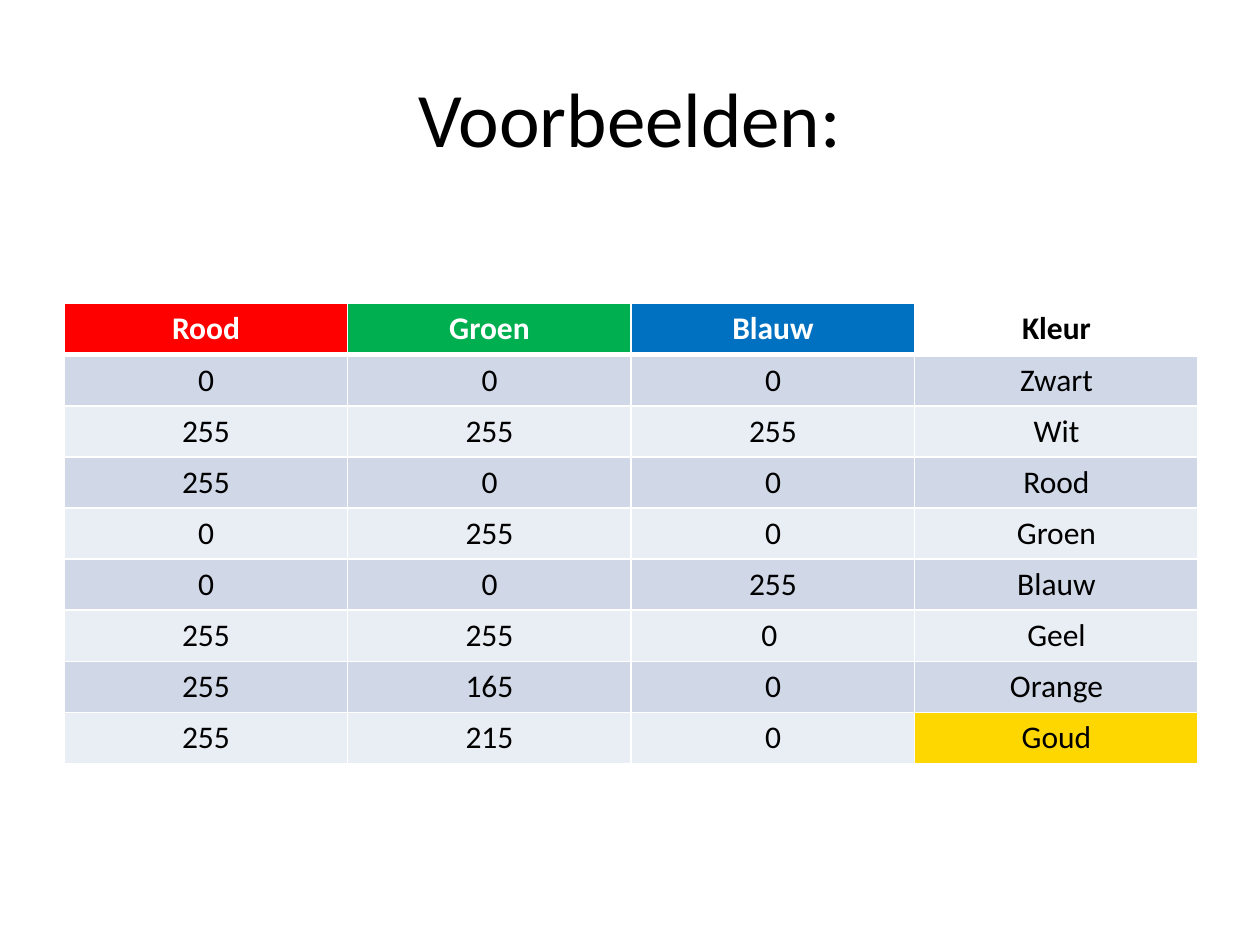
"""Build a slide with a table of RGB values and the colours they make."""
from lxml.etree import SubElement
from pptx import Presentation
from pptx.dml.color import RGBColor
from pptx.enum.text import MSO_ANCHOR, PP_ALIGN
from pptx.oxml.ns import qn
from pptx.util import Inches, Pt


def style(paragraph, size, colour, bold=False):
    paragraph.alignment = PP_ALIGN.CENTER
    font = paragraph.font
    font.name, font.size, font.bold = "Calibri", Pt(size), bold
    font.color.rgb = RGBColor.from_string(colour)


def border(cell, side, width):
    line = SubElement(cell._tc.get_or_add_tcPr(), qn(f"a:ln{side}"), w=str(Pt(width)))
    SubElement(SubElement(line, qn("a:solidFill")), qn("a:srgbClr"), val="FFFFFF")


COLOURS = [
    ("Rood", "Groen", "Blauw", "Kleur"),
    ("0", "0", "0", "Zwart"),
    ("255", "255", "255", "Wit"),
    ("255", "0", "0", "Rood"),
    ("0", "255", "0", "Groen"),
    ("0", "0", "255", "Blauw"),
    ("255", "255", "0 ", "Geel"),
    ("255", "165", "0", "Orange"),
    ("255", "215", "0", "Goud"),
]
BANDS = ("E9EDF4", "D0D8E8")
FILLS = {(0, 0): "FF0000", (0, 1): "00B050", (0, 2): "0070C0", (0, 3): None, (8, 3): "FFD700"}

prs = Presentation()
prs.slide_width, prs.slide_height = Inches(10), Inches(7.5)
slide = prs.slides.add_slide(prs.slide_layouts[6])

title = slide.shapes.add_textbox(Inches(0.5), Inches(0.3), Inches(9), Inches(1.25)).text_frame
title.word_wrap = True
title.vertical_anchor = MSO_ANCHOR.MIDDLE
title.text = "Voorbeelden:"
style(title.paragraphs[0], 44, "000000")

rgb_table = slide.shapes.add_table(
    len(COLOURS), len(COLOURS[0]), Inches(0.51), Inches(2.41), Inches(9), Inches(3.65)
).table

for row, values in enumerate(COLOURS):
    for column, value in enumerate(values):
        cell = rgb_table.cell(row, column)
        cell.text = value
        on_dark = row == 0 and column < 3
        style(cell.text_frame.paragraphs[0], 18, "FFFFFF" if on_dark else "000000", row == 0)
        for side in "LRTB":
            under_header = (row, side) in ((0, "B"), (1, "T"))
            border(cell, side, 3 if under_header else 1)
        fill = FILLS.get((row, column), BANDS[row % 2])
        if fill:
            cell.fill.solid()
            cell.fill.fore_color.rgb = RGBColor.from_string(fill)
        else:
            cell.fill.background()

prs.save("out.pptx")
